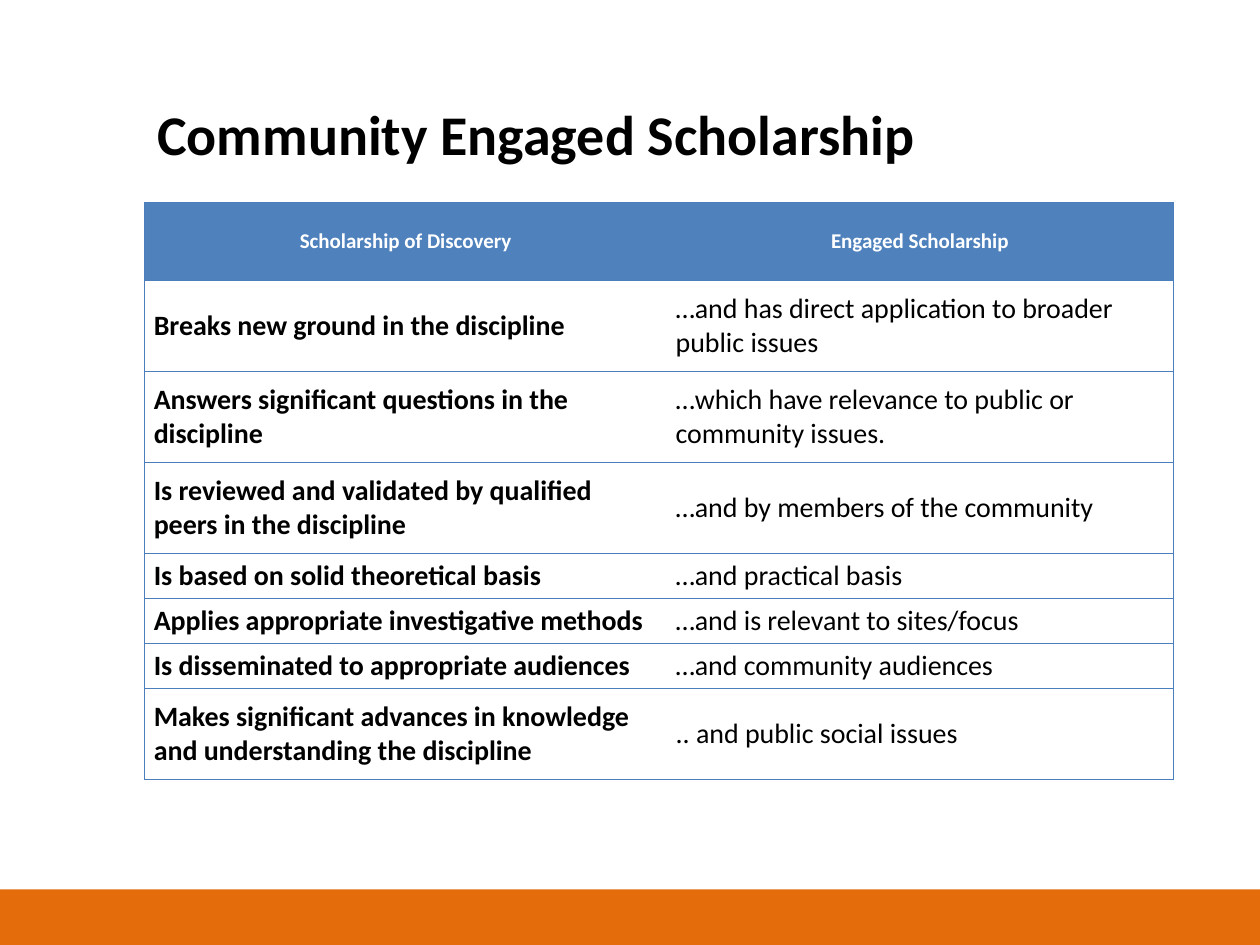
import dataclasses

import lxml.etree
import pptx
import pptx.dml.color
import pptx.enum.shapes
import pptx.enum.text
import pptx.oxml.ns
import pptx.slide
import pptx.table
import pptx.text.text
import pptx.util

Cm = pptx.util.Cm
ALIGN = pptx.enum.text.PP_ALIGN
ANCHOR = pptx.enum.text.MSO_ANCHOR

COLORS = {
    "band": "E46C0A",
    "header": "4F81BD",
    "border": "4B7EBC",
    "light": "FFFFFF",
    "dark": "000000",
}
FONT = "Calibri"
COLUMN_WIDTHS = (Cm(10.52), Cm(10.21))
HEADER_HEIGHT = Cm(1.57)
LINE_HEIGHT = Cm(0.91)
TALL_HEIGHT = Cm(1.83)


@dataclasses.dataclass(frozen=True)
class Comparison:
    discovery: str
    engaged: str
    height: int = TALL_HEIGHT


HEADER = Comparison("Scholarship of Discovery", "Engaged Scholarship", HEADER_HEIGHT)
COMPARISONS = (
    Comparison(
        "Breaks new ground in the discipline",
        "…and has direct application to broader public issues",
    ),
    Comparison(
        "Answers significant questions in the discipline",
        "…which have relevance to public or community issues.",
    ),
    Comparison(
        "Is reviewed and validated by qualified peers in the discipline",
        "…and by members of the community",
    ),
    Comparison("Is based on solid theoretical basis", "…and practical basis", LINE_HEIGHT),
    Comparison(
        "Applies appropriate investigative methods",
        "…and is relevant to sites/focus",
        LINE_HEIGHT,
    ),
    Comparison(
        "Is disseminated to appropriate audiences", "…and community audiences", LINE_HEIGHT
    ),
    Comparison(
        "Makes significant advances in knowledge and understanding the discipline",
        ".. and public social issues",
    ),
)


def rgb(name: str) -> pptx.dml.color.RGBColor:
    return pptx.dml.color.RGBColor.from_string(COLORS[name])


def write_text(
    frame: pptx.text.text.TextFrame,
    text: str,
    *,
    size: float,
    color: str = "dark",
    bold: bool = False,
    align: ALIGN = ALIGN.LEFT,
    spacing: float = 1.0,
) -> None:
    frame.word_wrap = True
    paragraph = frame.paragraphs[0]
    paragraph.alignment = align
    paragraph.line_spacing = spacing
    run = paragraph.add_run()
    run.text = text
    run.font.name = FONT
    run.font.size = pptx.util.Pt(size)
    run.font.bold = bold
    run.font.color.rgb = rgb(color)


def set_borders(cell: pptx.table._Cell, visible_sides: str) -> None:
    qn = pptx.oxml.ns.qn
    properties = cell._tc.get_or_add_tcPr()
    for position, side in enumerate("LRTB"):
        line = lxml.etree.Element(qn(f"a:ln{side}"), w=str(pptx.util.Pt(0.75)))
        if side in visible_sides:
            fill = lxml.etree.SubElement(line, qn("a:solidFill"))
            lxml.etree.SubElement(fill, qn("a:srgbClr"), val=COLORS["border"])
        else:
            lxml.etree.SubElement(line, qn("a:noFill"))
        properties.insert(position, line)


def fill_row(table: pptx.table.Table, index: int, comparison: Comparison) -> None:
    is_header = index == 0
    table.rows[index].height = comparison.height
    for column, text in enumerate((comparison.discovery, comparison.engaged)):
        cell = table.cell(index, column)
        cell.margin_left = cell.margin_right = Cm(0.18)
        cell.margin_top = cell.margin_bottom = 0
        if is_header:
            cell.fill.solid()
            cell.fill.fore_color.rgb = rgb("header")
            write_text(
                cell.text_frame, text, size=12, color="light", bold=True,
                align=ALIGN.CENTER, spacing=2.0,
            )
        else:
            cell.fill.background()
            cell.vertical_anchor = ANCHOR.MIDDLE
            write_text(cell.text_frame, text, size=16, bold=column == 0)
        set_borders(cell, "LTB" if column == 0 else "RTB")


def add_band(slide: pptx.slide.Slide) -> None:
    band = slide.shapes.add_shape(
        pptx.enum.shapes.MSO_SHAPE.RECTANGLE, 0, Cm(17.93), Cm(25.4), Cm(1.12)
    )
    band.shadow.inherit = False
    band.fill.solid()
    band.fill.fore_color.rgb = rgb("band")
    band.line.fill.background()


def add_comparison_table(slide: pptx.slide.Slide) -> None:
    rows = (HEADER, *COMPARISONS)
    table = slide.shapes.add_table(
        len(rows), len(COLUMN_WIDTHS), Cm(2.92), Cm(4.09),
        sum(COLUMN_WIDTHS), sum(row.height for row in rows),
    ).table
    table.horz_banding = False
    for column, width in zip(table.columns, COLUMN_WIDTHS):
        column.width = width
    for index, row in enumerate(rows):
        fill_row(table, index, row)


def main() -> None:
    presentation = pptx.Presentation()
    presentation.slide_width = Cm(25.4)
    presentation.slide_height = Cm(19.05)
    slide = presentation.slides.add_slide(presentation.slide_layouts[6])
    add_band(slide)
    title = slide.shapes.add_textbox(Cm(2.92), Cm(1.88), Cm(19.96), Cm(1.63))
    write_text(title.text_frame, "Community Engaged Scholarship", size=32, bold=True)
    add_comparison_table(slide)
    presentation.save("out.pptx")


if __name__ == "__main__":
    main()
